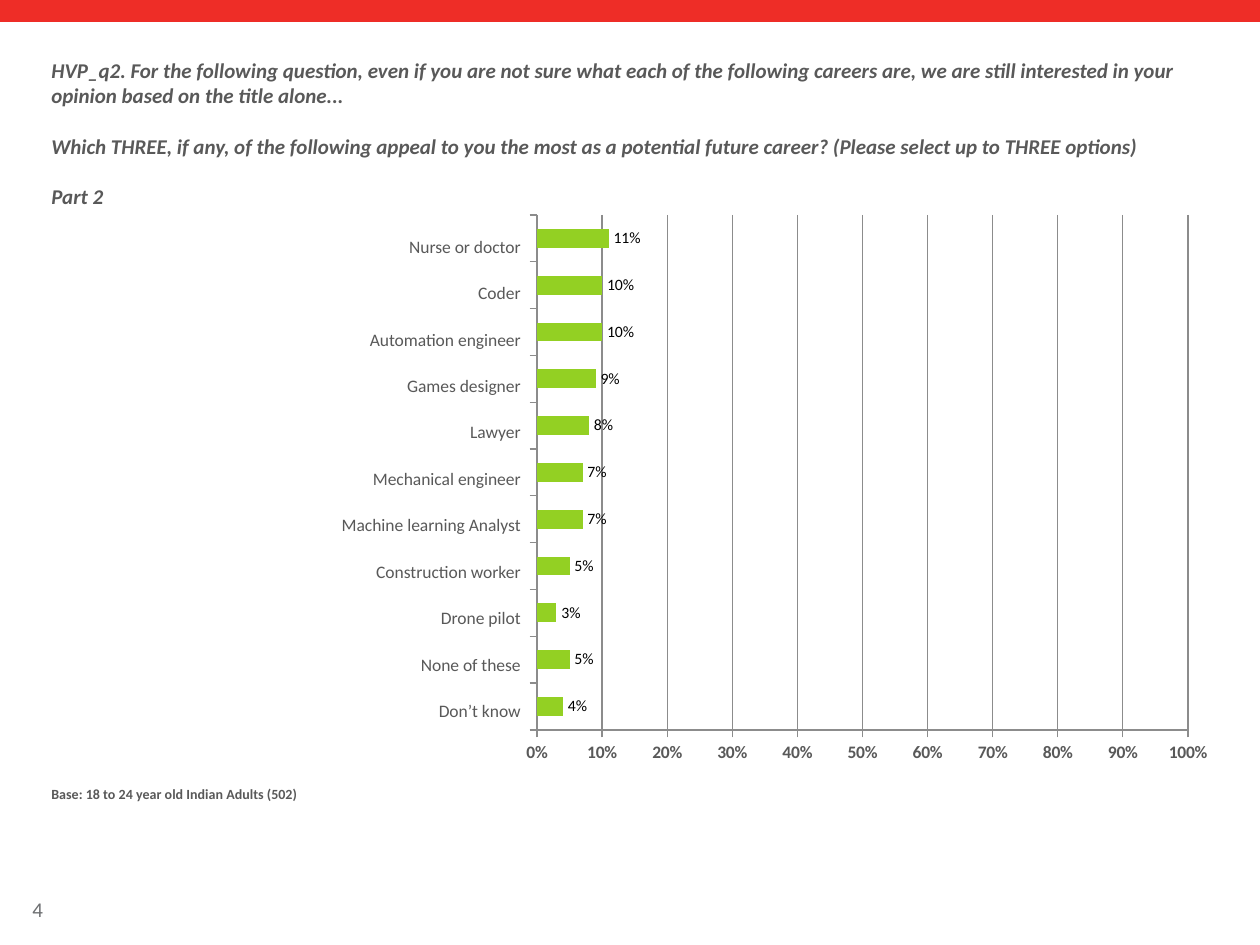
from lxml import etree
from pptx import Presentation, util as u
from pptx.chart.data import CategoryChartData
from pptx.dml.color import RGBColor
from pptx.enum import chart as c, shapes, text
from pptx.oxml.ns import qn

PX = 914400 / 126
COLORS = {"red": "EE2D27", "green": "93D023", "text": "595959",
          "muted": "6D6F71", "axis": "8C8C8C", "black": "000000"}
QUESTION = [
    "HVP_q2. For the following question, even if you are not sure what each of "
    "the following careers are, we are still interested in your opinion based "
    "on the title alone...",
    "Which THREE, if any, of the following appeal to you the most as a potential "
    "future career? (Please select up to THREE options)",
    "Part 2",
]
CAREERS = [
    ("Nurse or doctor", 0.11), ("Coder", 0.10), ("Automation engineer", 0.10),
    ("Games designer", 0.09), ("Lawyer", 0.08), ("Mechanical engineer", 0.07),
    ("Machine learning Analyst", 0.07), ("Construction worker", 0.05),
    ("Drone pilot", 0.03), ("None of these", 0.05), ("Don’t know", 0.04),
]


def px(*lengths):
    return [u.Emu(round(length * PX)) for length in lengths]


def rgb(name):
    return RGBColor.from_string(COLORS[name])


def style(font, size, color="text", bold=False, italic=False):
    font.name, font.size = "Calibri", u.Pt(size)
    font.bold, font.italic = bold, italic
    font.color.rgb = rgb(color)


def add_text(slide, box, lines, size, color="text", bold=False, italic=False,
             align=text.PP_ALIGN.LEFT, anchor=text.MSO_ANCHOR.TOP, gap=0):
    frame = slide.shapes.add_textbox(*px(*box)).text_frame
    frame.word_wrap = True
    frame.vertical_anchor = anchor
    frame.text = "\n".join(lines)
    for index, paragraph in enumerate(frame.paragraphs):
        paragraph.alignment = align
        if index and gap:
            paragraph.space_before = u.Pt(gap)
        for run in paragraph.runs:
            style(run.font, size, color, bold, italic)


def add_top_band(slide, box):
    band = slide.shapes.add_shape(shapes.MSO_SHAPE.RECTANGLE, *px(*box))
    band.shadow.inherit = False
    band.fill.solid()
    band.fill.fore_color.rgb = rgb("red")
    band.line.fill.background()


def add_career_labels(slide, box):
    left, top, width, height = box
    pitch = height / len(CAREERS)
    for row, (career, _) in enumerate(CAREERS):
        add_text(slide, (left, top + row * pitch, width, pitch), [career], 10,
                 align=text.PP_ALIGN.RIGHT, anchor=text.MSO_ANCHOR.MIDDLE)


def set_plot_box(chart, box, plot):
    """Fix the inner plot area, given in px within the chart box."""
    area = chart._chartSpace.chart.plotArea
    for old in area.findall(qn("c:layout")):
        area.remove(old)
    layout = etree.Element(qn("c:layout"))
    manual = etree.SubElement(layout, qn("c:manualLayout"))
    fractions = [part / box[2 + i % 2] for i, part in enumerate(plot)]
    settings = [("layoutTarget", "inner"), ("xMode", "edge"), ("yMode", "edge")]
    settings += [(key, f"{value:.4f}") for key, value in zip("xywh", fractions)]
    for tag, value in settings:
        etree.SubElement(manual, qn(f"c:{tag}")).set("val", value)
    area.insert(0, layout)


def add_career_chart(slide, box):
    # Bars run upwards, so the list is reversed
    data = CategoryChartData(number_format="0%")
    data.categories = [str(n + 1) for n in range(len(CAREERS))]
    data.add_series("Series 1", [share for _, share in reversed(CAREERS)])
    chart = slide.shapes.add_chart(
        c.XL_CHART_TYPE.BAR_CLUSTERED, *px(*box), data).chart
    chart.has_legend = chart.has_title = False
    chart.font.name, chart.font.size = "Manrope", u.Pt(18)
    chart.font.color.rgb = rgb("muted")
    set_plot_box(chart, box, (24, 12, 651, 515))

    # Bars and their values
    plot = chart.plots[0]
    plot.gap_width, plot.overlap = 150, -10
    plot.vary_by_categories = False
    fill = plot.series[0].format.fill
    fill.solid()
    fill.fore_color.rgb = rgb("green")
    plot.has_data_labels = True
    labels = plot.data_labels
    labels.show_value = True
    labels.number_format, labels.number_format_is_linked = "0%", False
    labels.position = c.XL_LABEL_POSITION.OUTSIDE_END
    style(labels.font, 9, "black")

    # Axes
    category, value = chart.category_axis, chart.value_axis
    category.tick_label_position = c.XL_TICK_LABEL_POSITION.NONE
    category.has_major_gridlines = False
    value.tick_label_position = c.XL_TICK_LABEL_POSITION.LOW
    value.minimum_scale, value.maximum_scale, value.major_unit = 0, 1, 0.1
    value.tick_labels.number_format = "0%"
    value.tick_labels.number_format_is_linked = False
    value.has_major_gridlines = True
    value.major_gridlines.format.line.color.rgb = rgb("axis")
    for axis in (category, value):
        axis.major_tick_mark = c.XL_TICK_MARK.OUTSIDE
        axis.minor_tick_mark = c.XL_TICK_MARK.NONE
        axis.format.line.color.rgb = rgb("axis")
        style(axis.tick_labels.font, 10, bold=axis is value)


def build_survey_slide(presentation):
    slide = presentation.slides.add_slide(presentation.slide_layouts[6])
    add_top_band(slide, (0, 0, 1260, 22))
    # Page number
    add_text(slide, (20, 890, 97, 38), ["4"], 12, "muted",
             anchor=text.MSO_ANCHOR.MIDDLE)
    # Question
    add_text(slide, (39, 51, 1183, 154), QUESTION, 12, bold=True, italic=True,
             gap=14.6)
    add_career_chart(slide, (513, 203, 709, 571))
    add_career_labels(slide, (20, 223, 513, 511))
    # Base note
    add_text(slide, (39, 779, 1183, 54),
             ["Base: 18 to 24 year old Indian Adults (502)"], 8, bold=True)


def main():
    presentation = Presentation()
    presentation.slide_width, presentation.slide_height = px(1260, 945)
    build_survey_slide(presentation)
    presentation.save("out.pptx")


if __name__ == "__main__":
    main()
